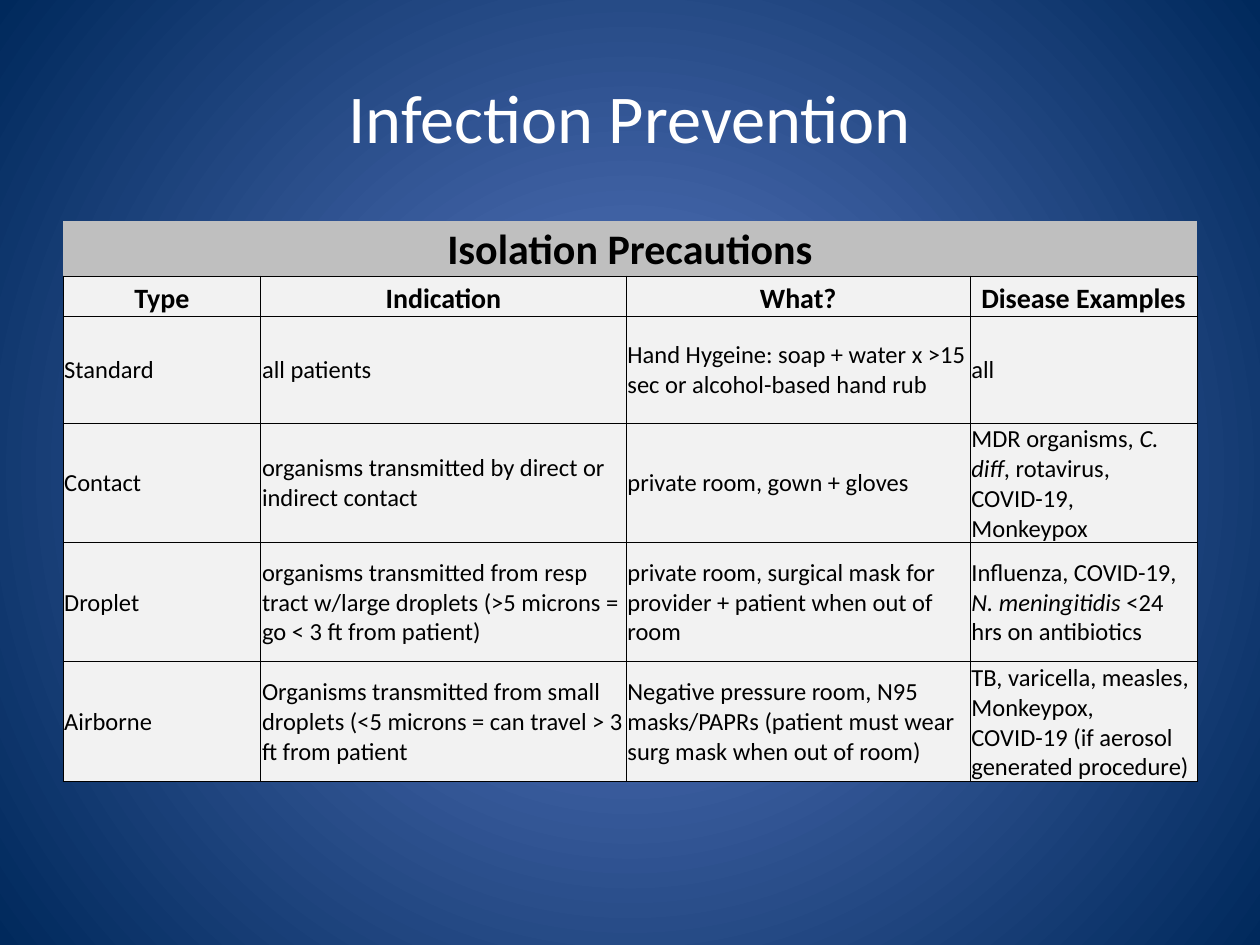
from dataclasses import dataclass

from lxml.etree import SubElement
from pptx import Presentation
from pptx.dml.color import RGBColor
from pptx.enum.text import MSO_ANCHOR, PP_ALIGN
from pptx.oxml.ns import qn
from pptx.util import Inches, Pt


@dataclass(frozen=True)
class Theme:
    """Colours, font and type sizes of the slide."""
    font: str = "Calibri"
    glow: str = "5E7CC5"
    edge: str = "00295C"
    title: str = "FFFFFF"
    ink: str = "000000"
    banner: str = "BFBFBF"
    body: str = "F2F2F2"
    title_size: float = 39.1
    banner_size: float = 24
    header_size: float = 16
    body_size: float = 14
    border: float = 0.5


THEME = Theme()
COLUMN_WIDTHS = (1.57, 2.9, 2.73, 1.8)
ROW_HEIGHTS = (0.44, 0.32, 0.85, 0.63, 0.95, 0.95)
HEADERS = ("Type", "Indication", "What?", "Disease Examples")
PRECAUTIONS = (
    ("Standard", "all patients",
     "Hand Hygeine: soap + water x >15 sec or alcohol-based hand rub", "all"),
    ("Contact", "organisms transmitted by direct or indirect contact",
     "private room, gown + gloves",
     [[("MDR organisms, ", False), ("C. diff", True),
       (", rotavirus, COVID-19, Monkeypox", False)]]),
    ("Droplet",
     "organisms transmitted from resp tract w/large droplets "
     "(>5 microns = go < 3 ft from patient)",
     "private room, surgical mask for provider + patient when out of room",
     [[("Influenza, COVID-19,", False)],
      [("N. meningitidis ", True), ("<24 hrs on antibiotics", False)]]),
    ("Airborne",
     "Organisms transmitted from small droplets "
     "(<5 microns = can travel > 3 ft from patient",
     "Negative pressure room, N95 masks/PAPRs "
     "(patient must wear surg mask when out of room)",
     "TB, varicella, measles, Monkeypox, COVID-19 (if aerosol generated procedure)"),
)


def paint_background(slide):
    """Fill the slide with a gradient that darkens away from its centre."""
    fill = slide.background.fill
    fill.gradient()
    for stop, colour in zip(fill.gradient_stops, (THEME.glow, THEME.edge)):
        stop.color.rgb = RGBColor.from_string(colour)
    gradient = slide.element.find(".//" + qn("a:gradFill"))
    gradient.remove(gradient.find(qn("a:lin")))
    circle = SubElement(gradient, qn("a:path"), path="circle")
    SubElement(circle, qn("a:fillToRect"),
               {side: "50000" for side in ("l", "t", "r", "b")})


def write(frame, content, size, colour, bold=False, align=PP_ALIGN.LEFT):
    """Write a string, or paragraphs of (text, italic) runs, into a frame."""
    paragraphs = [[(content, False)]] if isinstance(content, str) else content
    for index, runs in enumerate(paragraphs):
        paragraph = frame.add_paragraph() if index else frame.paragraphs[0]
        paragraph.alignment = align
        for text, italic in runs:
            run = paragraph.add_run()
            run.text = text
            run.font.name = THEME.font
            run.font.size = Pt(size)
            run.font.bold = bold
            run.font.italic = italic
            run.font.color.rgb = RGBColor.from_string(colour)


def add_title(slide, left, top, width, height):
    """Place the centred slide title in the given box."""
    frame = slide.shapes.add_textbox(left, top, width, height).text_frame
    frame.word_wrap = True
    frame.vertical_anchor = MSO_ANCHOR.MIDDLE
    write(frame, "Infection Prevention", THEME.title_size, THEME.title,
          align=PP_ALIGN.CENTER)


def style_cell(cell, fill, anchor, sides):
    """Set the fill, margins, anchor and borders of one cell."""
    cell.margin_left = cell.margin_right = cell.margin_top = Inches(0.01)
    cell.margin_bottom = 0
    cell.vertical_anchor = anchor
    properties = cell._tc.get_or_add_tcPr()
    for side in ("L", "R", "T", "B"):
        visible = side in sides
        line = SubElement(properties, qn(f"a:ln{side}"),
                          w=str(Pt(THEME.border) if visible else 0))
        paint = SubElement(line, qn("a:solidFill" if visible else "a:noFill"))
        if visible:
            SubElement(paint, qn("a:srgbClr"), val=THEME.ink)
    cell.fill.solid()
    cell.fill.fore_color.rgb = RGBColor.from_string(fill)


def add_precautions(slide, left, top, width, height):
    """Place the isolation table with its banner, header and body rows."""
    table = slide.shapes.add_table(len(ROW_HEIGHTS), len(COLUMN_WIDTHS),
                                   left, top, width, height).table
    table.first_row = table.horz_banding = False
    for column, share in zip(table.columns, COLUMN_WIDTHS):
        column.width = int(width * share / sum(COLUMN_WIDTHS))
    for row, share in zip(table.rows, ROW_HEIGHTS):
        row.height = int(height * share / sum(ROW_HEIGHTS))

    for cell in table.rows[0].cells:
        style_cell(cell, THEME.banner, MSO_ANCHOR.BOTTOM, "B")
    banner = table.cell(0, 0)
    banner.merge(table.cell(0, len(COLUMN_WIDTHS) - 1))
    write(banner.text_frame, "Isolation Precautions", THEME.banner_size,
          THEME.ink, True, PP_ALIGN.CENTER)

    for column, header in enumerate(HEADERS):
        cell = table.cell(1, column)
        style_cell(cell, THEME.body, MSO_ANCHOR.BOTTOM, "LRTB")
        write(cell.text_frame, header, THEME.header_size, THEME.ink, True,
              PP_ALIGN.CENTER)
    for row, precaution in enumerate(PRECAUTIONS, start=2):
        for column, content in enumerate(precaution):
            cell = table.cell(row, column)
            style_cell(cell, THEME.body, MSO_ANCHOR.MIDDLE, "LRTB")
            write(cell.text_frame, content, THEME.body_size, THEME.ink)


def main():
    """Build and save the presentation."""
    presentation = Presentation()
    presentation.slide_width = Inches(10)
    presentation.slide_height = Inches(7.5)
    slide = presentation.slides.add_slide(presentation.slide_layouts[6])
    paint_background(slide)
    add_title(slide, Inches(0.5), Inches(0.3), Inches(9), Inches(1.25))
    add_precautions(slide, Inches(0.5), Inches(1.75), Inches(9),
                    Inches(sum(ROW_HEIGHTS)))
    presentation.save("out.pptx")


if __name__ == "__main__":
    main()
